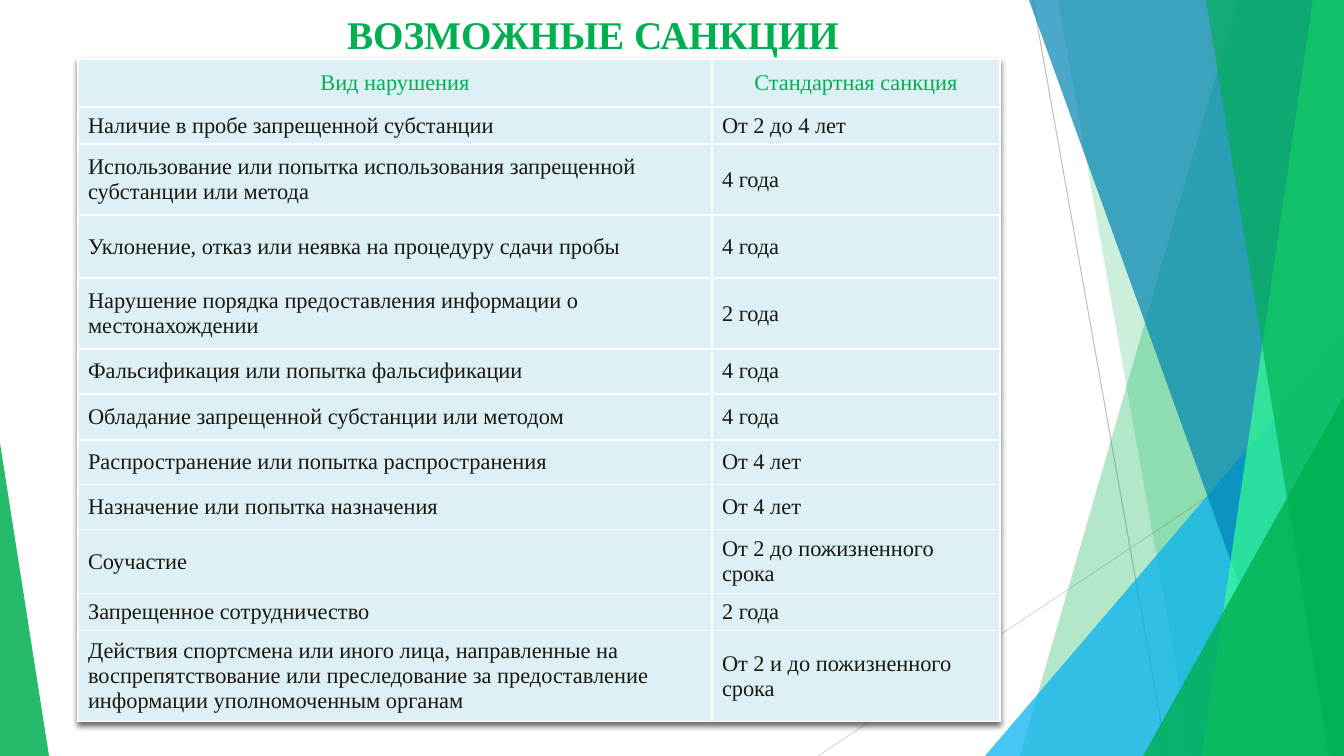
"""Build the slide that lists possible sanctions for rule violations."""
from lxml.etree import SubElement
from pptx import Presentation
from pptx.dml.color import RGBColor
from pptx.enum.shapes import MSO_CONNECTOR, MSO_SHAPE
from pptx.enum.text import MSO_ANCHOR, PP_ALIGN
from pptx.oxml import parse_xml
from pptx.oxml.ns import nsdecls, qn
from pptx.util import Pt

PX = 914400 / 100.8
WIDTH, HEIGHT = 1344, 756

THEME = {
    "font": "Times New Roman",
    "title_size": 28,
    "cell_size": 16,
    "line_width": 0.75,
    "border_width": 1,
    "green": "00B050",
    "mint": "37FF92",
    "sky": "00B0F0",
    "blue": "0084B4",
    "gray": "BFBFBF",
    "pale_gray": "D9D9D9",
    "text": "1B190F",
    "cell": "DCF0F5",
    "border": "FFFFFF",
}

TITLE = "ВОЗМОЖНЫЕ САНКЦИИ"
TITLE_BOX = (0, 5, 1186, 57)
TABLE_ORIGIN = (78, 59)
COLUMN_WIDTHS = (634, 288)
ROWS = [
    (48, "Вид нарушения", "Стандартная санкция"),
    (37, "Наличие в пробе запрещенной субстанции", "От 2 до 4 лет"),
    (71, "Использование или попытка использования запрещенной субстанции или метода", "4 года"),
    (63, "Уклонение, отказ или неявка на процедуру сдачи пробы", "4 года"),
    (71, "Нарушение порядка предоставления информации о местонахождении", "2 года"),
    (45, "Фальсификация или попытка фальсификации", "4 года"),
    (46, "Обладание запрещенной субстанции или методом", "4 года"),
    (45, "Распространение или попытка распространения", "От 4 лет"),
    (45, "Назначение или попытка назначения", "От 4 лет"),
    (64, "Соучастие", "От 2 до пожизненного срока"),
    (37, "Запрещенное сотрудничество", "2 года"),
    (91, "Действия спортсмена или иного лица, направленные на воспрепятствование "
         "или преследование за предоставление информации уполномоченным органам",
     "От 2 и до пожизненного срока"),
]

LINES = [
    ((1033, 0), (1167, HEIGHT), "gray"),
    ((WIDTH, 406), (818, HEIGHT), "pale_gray"),
]

# Bands give top-left and bottom corners; triangles give left, top, width and apex.
FACETS = [
    ("band", (1238, 1020, WIDTH), "green", 30),
    ("band", (1058, 1192, WIDTH), "green", 20),
    ("triangle", (985, 336, 359, 1), "sky", 72),
    ("band", (1029, 1301, WIDTH), "blue", 70),
    ("band", (1313, 1202, WIDTH), "mint", 70),
    ("band", (1206, 1329, WIDTH), "green", 65),
    ("triangle", (1143, 396, 201, 1), "green", 80),
    ("triangle", (0, 443, 49, 0), "green", 85),
]


def px(*lengths):
    return [round(length * PX) for length in lengths]


def color(name):
    return RGBColor.from_string(THEME[name])


def style(paragraph, size, color_name, alignment, bold=False):
    paragraph.alignment = alignment
    font = paragraph.runs[0].font
    font.name, font.size, font.bold = THEME["font"], Pt(THEME[size]), bold
    font.color.rgb = color(color_name)


def add_line(slide, start, end, color_name):
    line = slide.shapes.add_connector(MSO_CONNECTOR.STRAIGHT, *px(*start, *end))
    line.line.color.rgb = color(color_name)
    line.line.width = Pt(THEME["line_width"])
    SubElement(line._element.spPr, qn("a:effectLst"))


def add_facet(slide, kind, geometry, color_name, opacity):
    if kind == "band":
        top_left, bottom_left, right = geometry
        builder = slide.shapes.build_freeform(top_left, 0, scale=PX)
        builder.add_line_segments([(right, 0), (right, HEIGHT), (bottom_left, HEIGHT)])
        shape = builder.convert_to_shape()
    else:
        left, top, width, apex = geometry
        box = px(left, top, width, HEIGHT - top)
        shape = slide.shapes.add_shape(MSO_SHAPE.ISOSCELES_TRIANGLE, *box)
        shape.adjustments[0] = apex
    shape.shadow.inherit = False
    shape.fill.solid()
    shape.fill.fore_color.rgb = color(color_name)
    fill_color = shape._element.spPr.find(".//" + qn("a:srgbClr"))
    SubElement(fill_color, qn("a:alpha"), val=str(opacity * 1000))
    shape.line.fill.background()


def add_title(slide):
    frame = slide.shapes.add_textbox(*px(*TITLE_BOX)).text_frame
    frame.word_wrap = True
    frame.text = TITLE
    style(frame.paragraphs[0], "title_size", "green", PP_ALIGN.CENTER, bold=True)


def set_borders(cell):
    properties = cell._tc.get_or_add_tcPr()
    for side in ("lnL", "lnR", "lnT", "lnB"):
        border = SubElement(properties, qn("a:" + side), w=str(Pt(THEME["border_width"])))
        fill = SubElement(border, qn("a:solidFill"))
        SubElement(fill, qn("a:srgbClr"), val=THEME["border"])


def add_sanctions_table(slide):
    size = (sum(COLUMN_WIDTHS), sum(row[0] for row in ROWS))
    frame = slide.shapes.add_table(len(ROWS), len(COLUMN_WIDTHS), *px(*TABLE_ORIGIN, *size))
    table = frame.table
    table.first_row = table.horz_banding = False
    table._tbl.tblPr.insert(0, parse_xml(
        f'<a:effectLst {nsdecls("a")}><a:outerShdw blurRad="50800" dist="25400" dir="5400000">'
        '<a:srgbClr val="000000"><a:alpha val="60000"/></a:srgbClr>'
        '</a:outerShdw></a:effectLst>'))
    for column, width in zip(table.columns, px(*COLUMN_WIDTHS)):
        column.width = width
    for row_index, (height, *texts) in enumerate(ROWS):
        table.rows[row_index].height = px(height)[0]
        is_header = row_index == 0
        text_color = "green" if is_header else "text"
        alignment = PP_ALIGN.CENTER if is_header else PP_ALIGN.LEFT
        for column_index, text in enumerate(texts):
            cell = table.cell(row_index, column_index)
            cell.text_frame.text = text
            cell.vertical_anchor = MSO_ANCHOR.MIDDLE
            style(cell.text_frame.paragraphs[0], "cell_size", text_color, alignment)
            set_borders(cell)
            cell.fill.solid()
            cell.fill.fore_color.rgb = color("cell")


def main():
    presentation = Presentation()
    presentation.slide_width, presentation.slide_height = px(WIDTH, HEIGHT)
    slide = presentation.slides.add_slide(presentation.slide_layouts[6])
    for line in LINES:
        add_line(slide, *line)
    for facet in FACETS:
        add_facet(slide, *facet)
    add_title(slide)
    add_sanctions_table(slide)
    presentation.save("out.pptx")


if __name__ == "__main__":
    main()
